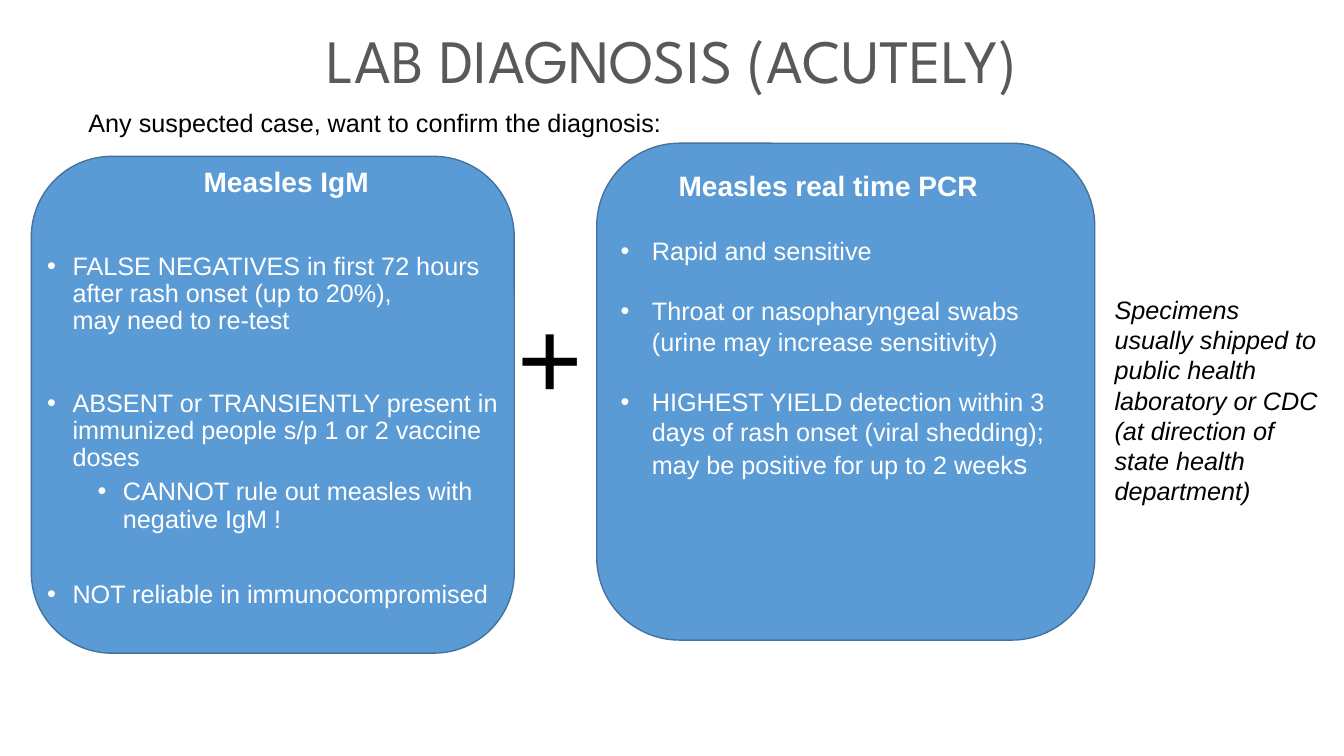
"""Build the measles laboratory diagnosis slide."""
from dataclasses import dataclass

from lxml import etree
from pptx import Presentation
from pptx import util as u
from pptx.dml.color import RGBColor
from pptx.enum import shapes, text
from pptx.oxml import ns

BLACK = RGBColor(0x00, 0x00, 0x00)
WHITE = RGBColor(0xFF, 0xFF, 0xFF)
GREY = RGBColor(0x59, 0x59, 0x59)
BLUE = RGBColor(0x5B, 0x9B, 0xD5)
DARK_BLUE = RGBColor(0x43, 0x73, 0x9E)


@dataclass
class Area:
    left: float
    top: float
    width: float
    height: float

    def lengths(self) -> list:
        return [u.Cm(n) for n in (self.left, self.top, self.width, self.height)]


@dataclass
class Line:
    words: str
    size: float = 18
    bold: bool = False
    italic: bool = False
    color: RGBColor = BLACK
    centred: bool = False
    before: float = 0
    level: int = 0
    indent: float = 0
    hanging: float = 0


@dataclass
class Block:
    area: Area
    lines: list[Line]
    spacing: float = 1.0


def heading(words: str) -> Line:
    return Line(words, 20, bold=True, color=WHITE, centred=True)


def igm_point(words: str, before: float, level: int = 0) -> Line:
    return Line(words, color=WHITE, before=before, level=level,
                indent=0.64 + 1.27 * level, hanging=0.64)


def pcr_point(words: str, before: float) -> Line:
    return Line(words, color=WHITE, before=before, level=1, indent=2.06, hanging=0.79)


PANELS = [Area(0.79, 3.94, 12.17, 12.52), Area(15.04, 3.61, 12.55, 12.52)]

BLOCKS = [
    Block(Area(0.94, 4.11, 12.55, 9.17), [
        heading("Measles IgM"),
        igm_point("FALSE NEGATIVES in first 72 hours\vafter rash onset (up to 20%),\v"
                  "may need to re-test", 39.5),
        igm_point("ABSENT or TRANSIENTLY present in immunized people s/p 1 or 2 "
                  "vaccine doses", 39.5),
        igm_point("CANNOT rule out measles with negative IgM !", 5, level=1),
        igm_point("NOT reliable in immunocompromised", 34.5),
    ], spacing=0.9),
    Block(Area(14.12, 4.11, 13.51, 8.2), [
        heading("Measles real time PCR"),
        pcr_point("Rapid and sensitive", 24),
        pcr_point("Throat or nasopharyngeal swabs\v(urine may increase sensitivity)", 21.6),
        pcr_point("HIGHEST YIELD detection within 3 days of rash onset (viral shedding); "
                  "may be positive for up to 2 week", 21.6),
    ]),
    Block(Area(12.8, 7.11, 2.59, 3.68), [Line("+", 80)]),
    Block(Area(1.98, 2.59, 15.44, 1.02),
          [Line("Any suspected case, want to confirm the diagnosis:")]),
    Block(Area(27.84, 7.29, 5.77, 5.64), [
        Line("Specimens usually shipped to public health laboratory or CDC", italic=True),
        Line("(at direction of state health department)", italic=True),
    ]),
]


def style_span(span, size: float, color: RGBColor, name: str = "Arial") -> None:
    span.font.name = name
    span.font.size = u.Pt(size)
    span.font.color.rgb = color


def add_bullet(para, line: Line) -> None:
    properties = para._p.get_or_add_pPr()
    properties.set("marL", str(u.Cm(line.indent)))
    properties.set("indent", str(-u.Cm(line.hanging)))
    etree.SubElement(properties, ns.qn("a:buFont"), typeface="Arial")
    etree.SubElement(properties, ns.qn("a:buChar"), char="•")


def write_line(para, line: Line, spacing: float) -> None:
    para.text = line.words
    para.level = line.level
    if line.hanging:
        add_bullet(para, line)
    para.alignment = text.PP_ALIGN.CENTER if line.centred else text.PP_ALIGN.LEFT
    para.line_spacing = spacing
    para.space_before = u.Pt(line.before)
    for span in para.runs:
        style_span(span, line.size, line.color)
        span.font.bold = line.bold
        span.font.italic = line.italic


def add_panel(page, area: Area) -> None:
    panel = page.shapes.add_shape(shapes.MSO_SHAPE.ROUNDED_RECTANGLE, *area.lengths())
    panel.shadow.inherit = False
    panel.fill.solid()
    panel.fill.fore_color.rgb = BLUE
    panel.line.color.rgb = DARK_BLUE
    panel.line.width = u.Pt(1)


def add_block(page, block: Block):
    frame = page.shapes.add_textbox(*block.area.lengths()).text_frame
    frame.word_wrap = True
    frame.text = "\n".join(line.words for line in block.lines)
    for para, line in zip(frame.paragraphs, block.lines):
        write_line(para, line, block.spacing)
    return frame


def set_title(page) -> None:
    title = page.shapes.title
    title.left, title.top, title.width, title.height = Area(2.34, -0.23, 29.21, 3.68).lengths()
    frame = title.text_frame
    frame.text = "LAB DIAGNOSIS (ACUTELY)"
    frame.vertical_anchor = text.MSO_ANCHOR.MIDDLE
    para = frame.paragraphs[0]
    para.alignment = text.PP_ALIGN.CENTER
    para.line_spacing = 0.9
    style_span(para.runs[0], 44, GREY, "League Spartan")


def main() -> None:
    deck = Presentation()
    deck.slide_width, deck.slide_height = u.Cm(33.87), u.Cm(19.05)
    page = deck.slides.add_slide(deck.slide_layouts[5])
    set_title(page)
    for area in PANELS:
        add_panel(page, area)
    igm, pcr, *others = [add_block(page, block) for block in BLOCKS]
    plural = pcr.paragraphs[-1].add_run()
    plural.text = "s"
    style_span(plural, 20, WHITE)
    deck.save("out.pptx")


if __name__ == "__main__":
    main()
